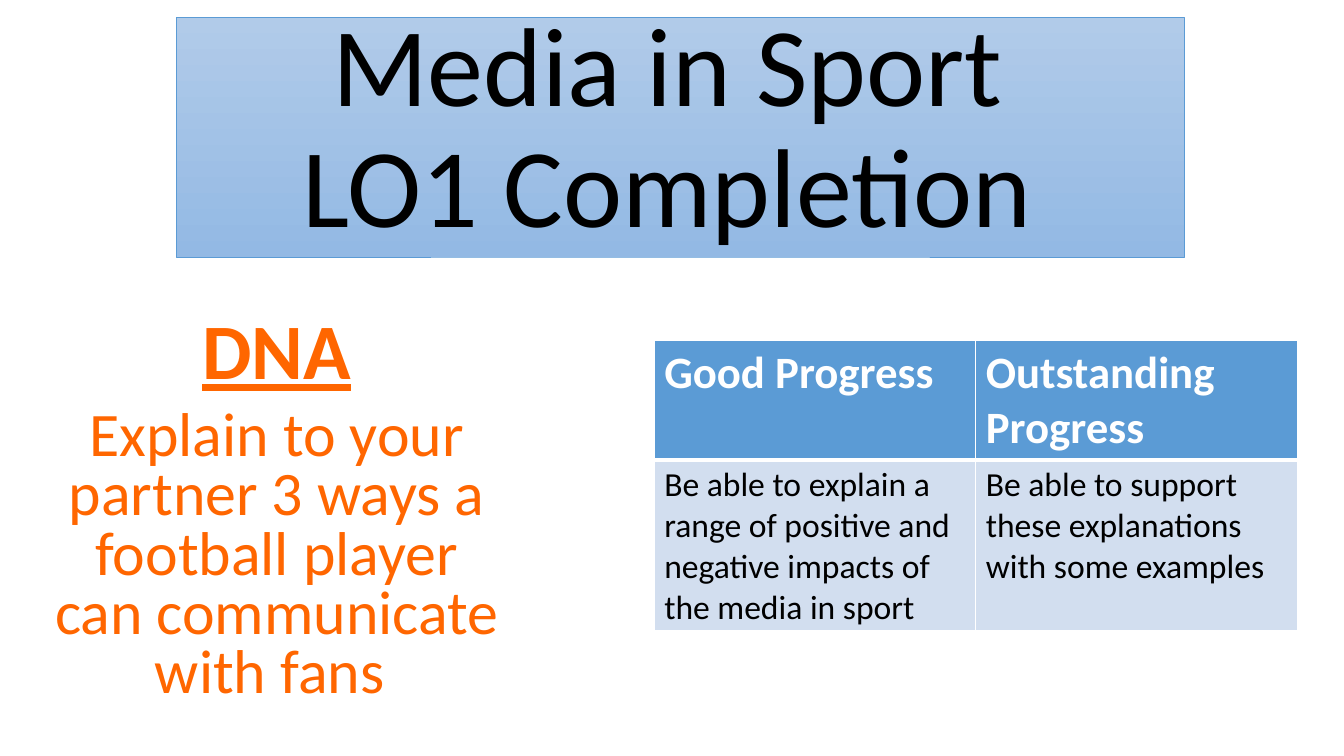
from dataclasses import dataclass
from typing import Any

from lxml import etree
from pptx import Presentation
from pptx.dml.color import RGBColor
from pptx.enum.shapes import MSO_SHAPE
from pptx.enum.text import MSO_ANCHOR, PP_ALIGN
from pptx.oxml.ns import qn
from pptx.util import Pt

RECTANGLE = MSO_SHAPE.RECTANGLE
CENTER, LEFT = PP_ALIGN.CENTER, PP_ALIGN.LEFT
TOP, BOTTOM = MSO_ANCHOR.TOP, MSO_ANCHOR.BOTTOM

FONT = "Calibri"
COLORS = {
    "black": "000000",
    "white": "FFFFFF",
    "orange": "FF6600",
    "blue": "5B9BD5",
    "pale blue": "D2DEEF",
    "gradient top": "B1CBE9",
    "gradient bottom": "93B9E4",
}


@dataclass
class TextStyle:
    size: float
    color: str
    bold: bool = False
    underline: bool = False
    alignment: Any = LEFT
    line_spacing: float = 1.0
    space_before: float = 0


@dataclass
class ProgressRow:
    height: float
    fill: str
    bottom_border: float
    style: TextStyle
    texts: tuple[str, str]


TITLE = TextStyle(80, "black", alignment=CENTER, line_spacing=0.9)
TASK_HEADING = TextStyle(56.1, "orange", True, True, CENTER, 0.8, 10)
TASK_BODY = TextStyle(44.2, "orange", False, False, CENTER, 0.8, 10)

TASK = [
    ("DNA", TASK_HEADING),
    ("Explain to your partner 3 ways a football player can communicate with fans ", TASK_BODY),
]
PROGRESS_ROWS = [
    ProgressRow(85, "blue", 3, TextStyle(32, "white", True),
                ("Good Progress", "Outstanding Progress")),
    ProgressRow(122, "pale blue", 1, TextStyle(24, "black"),
                ("Be able to explain a range of positive and negative impacts of the media in sport",
                 "Be able to support these explanations with some examples")),
]


def rgb(name: str) -> RGBColor:
    return RGBColor.from_string(COLORS[name])


def set_attributes(target: Any, values: dict[str, Any]) -> None:
    for name, value in values.items():
        setattr(target, name, value)


def write_paragraph(paragraph: Any, text: str, style: TextStyle) -> None:
    paragraph.text = text
    set_attributes(paragraph, {
        "alignment": style.alignment,
        "line_spacing": style.line_spacing,
        "space_before": Pt(style.space_before),
    })
    for run in paragraph.runs:
        set_attributes(run.font, {
            "name": FONT,
            "size": Pt(style.size),
            "bold": style.bold,
            "underline": style.underline,
        })
        run.font.color.rgb = rgb(style.color)


def add_title(slide: Any) -> None:
    shape = slide.shapes.add_shape(RECTANGLE, Pt(126), Pt(12.24), Pt(720), Pt(171.36))
    shape.shadow.inherit = False
    shape.fill.gradient()
    shape.fill.gradient_angle = 270
    for stop, name in zip(shape.fill.gradient_stops, ("gradient top", "gradient bottom")):
        stop.color.rgb = rgb(name)
    shape.line.color.rgb = rgb("blue")
    shape.line.width = Pt(0.5)
    set_attributes(shape.text_frame, {"word_wrap": True, "vertical_anchor": BOTTOM})
    write_paragraph(shape.text_frame.paragraphs[0], "Media in Sport \vLO1 Completion ", TITLE)


def add_task(slide: Any) -> None:
    shape = slide.shapes.add_textbox(Pt(25.92), Pt(224.64), Pt(343.44), Pt(304.56))
    frame = shape.text_frame
    set_attributes(frame, {"word_wrap": True, "vertical_anchor": TOP})
    for index, (text, style) in enumerate(TASK):
        paragraph = frame.add_paragraph() if index else frame.paragraphs[0]
        write_paragraph(paragraph, text, style)


def add_borders(cell: Any, bottom_width: float, top_width: float) -> None:
    properties = cell._tc.get_or_add_tcPr()
    widths = {"a:lnL": 1, "a:lnR": 1, "a:lnT": top_width, "a:lnB": bottom_width}
    for tag, width in widths.items():
        line = etree.SubElement(properties, qn(tag), w=str(Pt(width)))
        fill = etree.SubElement(line, qn("a:solidFill"))
        etree.SubElement(fill, qn("a:srgbClr"), val=COLORS["white"])


def add_progress_table(slide: Any) -> None:
    height = sum(row.height for row in PROGRESS_ROWS)
    table = slide.shapes.add_table(
        len(PROGRESS_ROWS), 2, Pt(467.28), Pt(243.36), Pt(459.36), Pt(height)).table
    top_width = 1
    for row_index, row in enumerate(PROGRESS_ROWS):
        table.rows[row_index].height = Pt(row.height)
        for column_index, text in enumerate(row.texts):
            cell = table.cell(row_index, column_index)
            add_borders(cell, row.bottom_border, top_width)
            cell.fill.solid()
            cell.fill.fore_color.rgb = rgb(row.fill)
            write_paragraph(cell.text_frame.paragraphs[0], text, row.style)
        top_width = row.bottom_border


def main() -> None:
    presentation = Presentation()
    set_attributes(presentation, {"slide_width": Pt(960), "slide_height": Pt(540)})
    slide = presentation.slides.add_slide(presentation.slide_layouts[6])

    # Title banner
    add_title(slide)
    # Starter task on the left
    add_task(slide)
    # Progress criteria on the right
    add_progress_table(slide)

    presentation.save("out.pptx")


if __name__ == "__main__":
    main()
